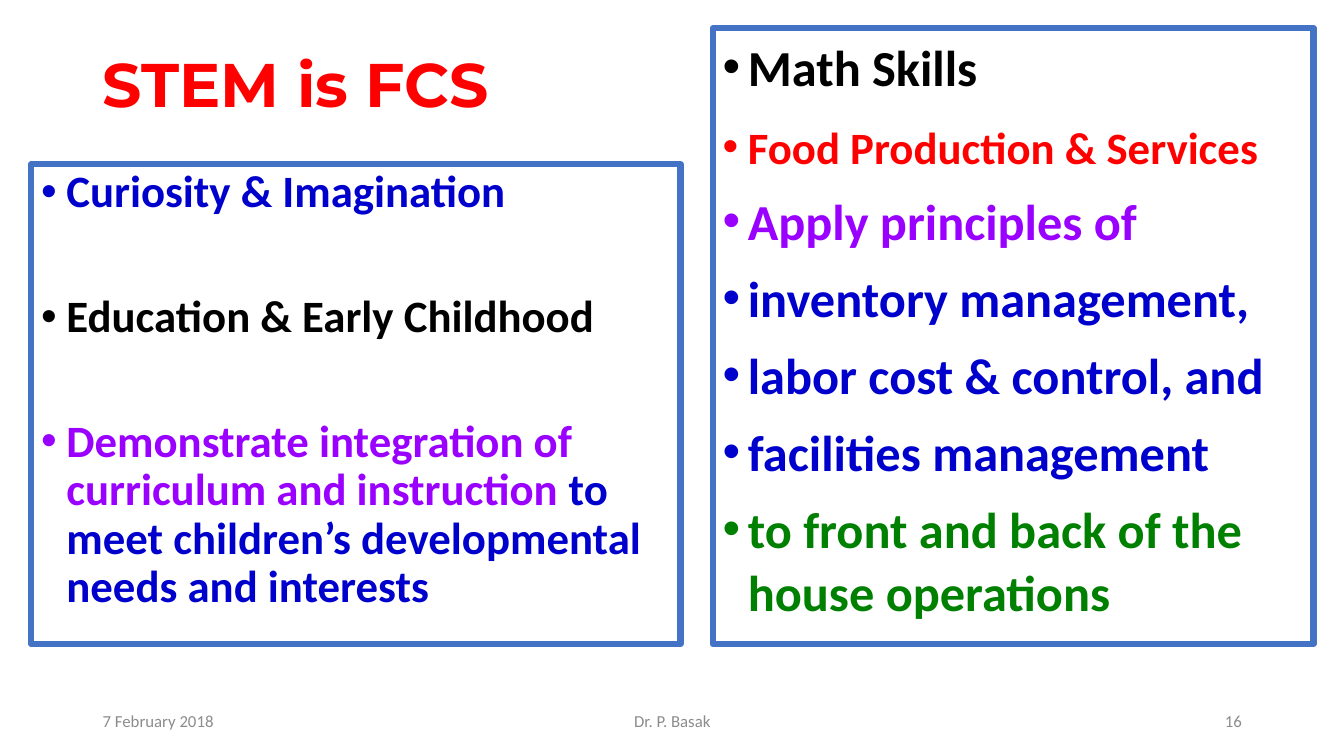
import dataclasses

import pptx
import pptx.dml.color
import pptx.enum.shapes
import pptx.enum.text
import pptx.oxml
import pptx.oxml.ns
import pptx.util

Align = pptx.enum.text.PP_ALIGN
Anchor = pptx.enum.text.MSO_ANCHOR


@dataclasses.dataclass(frozen=True)
class Theme:
    """Colours, fonts and type sizes of the slide."""

    red: str = "FF0000"
    blue: str = "0000CC"
    violet: str = "9900FF"
    green: str = "008000"
    black: str = "000000"
    grey: str = "8C8C8C"
    border: str = "4472C4"
    heading_font: str = "Montserrat"
    body_font: str = "Calibri"
    title_size: int = 44
    large_size: int = 36
    body_size: int = 32
    footer_size: int = 12
    border_width: float = 4.5
    indent: float = 0.25


class Page:
    """Places styled elements on a slide divided into 100 columns and 100 rows."""

    def __init__(self, deck, theme):
        """Add a title-only slide to the deck."""
        self.theme = theme
        self.column = deck.slide_width / 100
        self.row = deck.slide_height / 100
        self.slide = deck.slides.add_slide(deck.slide_layouts[5])

    def cells(self, left, top, width, height):
        """Turn grid columns and rows into slide lengths."""
        return (int(left * self.column), int(top * self.row),
                int(width * self.column), int(height * self.row))

    def apply(self, target, formats):
        """Set each named attribute on the target."""
        for name, value in formats.items():
            setattr(target, name, value)

    def span(self, para, text, size, color, font, bold):
        """Add one styled run to a paragraph."""
        run = para.add_run()
        run.text = text
        self.apply(run.font, {"size": pptx.util.Pt(size), "name": font, "bold": bold})
        run.font.color.rgb = pptx.dml.color.RGBColor.from_string(color)

    def frame(self, box, anchor):
        """Prepare the text frame of a box."""
        self.apply(box.text_frame, {
            "word_wrap": True,
            "auto_size": pptx.enum.text.MSO_AUTO_SIZE.NONE,
            "vertical_anchor": anchor,
        })
        return box.text_frame

    def title(self, text, *area):
        """Move and fill the title placeholder."""
        box = self.slide.shapes.title
        self.apply(box, dict(zip(("left", "top", "width", "height"), self.cells(*area))))
        para = self.frame(box, Anchor.MIDDLE).paragraphs[0]
        self.apply(para, {"alignment": Align.LEFT, "line_spacing": 0.9})
        self.span(para, text, self.theme.title_size, self.theme.red,
                  self.theme.heading_font, True)

    def bullet(self, para):
        """Give a paragraph a hanging bullet."""
        indent = pptx.util.Inches(self.theme.indent)
        properties = para._p.get_or_add_pPr()
        properties.set("marL", str(indent))
        properties.set("indent", str(-indent))
        namespace = pptx.oxml.ns.nsdecls("a")
        for markup in (f'<a:buFont {namespace} typeface="Arial"/>',
                       f'<a:buChar {namespace} char="•"/>'):
            properties.append(pptx.oxml.parse_xml(markup))

    def panel(self, items, line_spacing, gap, *area):
        """Add a bordered list whose items are lists of (text, size, colour)."""
        box = self.slide.shapes.add_shape(
            pptx.enum.shapes.MSO_SHAPE.RECTANGLE, *self.cells(*area))
        box.shadow.inherit = False
        box.fill.background()
        box.line.color.rgb = pptx.dml.color.RGBColor.from_string(self.theme.border)
        box.line.width = pptx.util.Pt(self.theme.border_width)
        frame = self.frame(box, Anchor.TOP)
        for index, spans in enumerate(items):
            para = frame.add_paragraph() if index else frame.paragraphs[0]
            self.apply(para, {
                "alignment": Align.LEFT,
                "line_spacing": line_spacing,
                "space_before": pptx.util.Pt(gap if index else 10),
            })
            self.bullet(para)
            for text, size, color in spans:
                self.span(para, text, size, color, self.theme.body_font, True)

    def footer(self, text, alignment, left, width):
        """Add one footer entry on the bottom row."""
        box = self.slide.shapes.add_textbox(*self.cells(left, 92.67, width, 5.33))
        para = self.frame(box, Anchor.MIDDLE).paragraphs[0]
        para.alignment = alignment
        self.span(para, text, self.theme.footer_size, self.theme.grey,
                  self.theme.body_font, False)


def main():
    """Build and save the slide."""
    deck = pptx.Presentation()
    deck.slide_width = pptx.util.Inches(13.33)
    deck.slide_height = pptx.util.Inches(7.5)
    theme = Theme()
    page = Page(deck, theme)
    body, large = theme.body_size, theme.large_size

    page.title("STEM is FCS", 6.9, 5.33, 86.25, 12.4)

    childhood = [
        [("Curiosity & Imagination", body, theme.blue)],
        [("Education & Early Childhood", body, theme.black)],
        [("Demonstrate integration of curriculum and instruction ", body, theme.violet),
         ("to meet children’s developmental needs and interests", body, theme.blue)],
    ]
    page.panel(childhood, 0.9, 54.5, 2.33, 21.73, 48.3, 63.47)

    food_services = [
        [("Math Skills", large, theme.black)],
        [("Food Production & Services", body, theme.red)],
        [("Apply principles of", large, theme.violet)],
        [("inventory management,", large, theme.blue)],
        [("labor cost & control, and", large, theme.blue)],
        [("facilities management", large, theme.blue)],
        [("to front and back of the house operations", large, theme.green)],
    ]
    page.panel(food_services, pptx.util.Pt(45), 10, 53.03, 3.73, 44.7, 81.47)

    for entry in (("7 February 2018", Align.LEFT, 6.9, 22.5),
                  ("Dr. P. Basak", Align.CENTER, 33.15, 33.75),
                  ("16", Align.RIGHT, 70.65, 22.5)):
        page.footer(*entry)

    deck.save("out.pptx")


if __name__ == "__main__":
    main()
